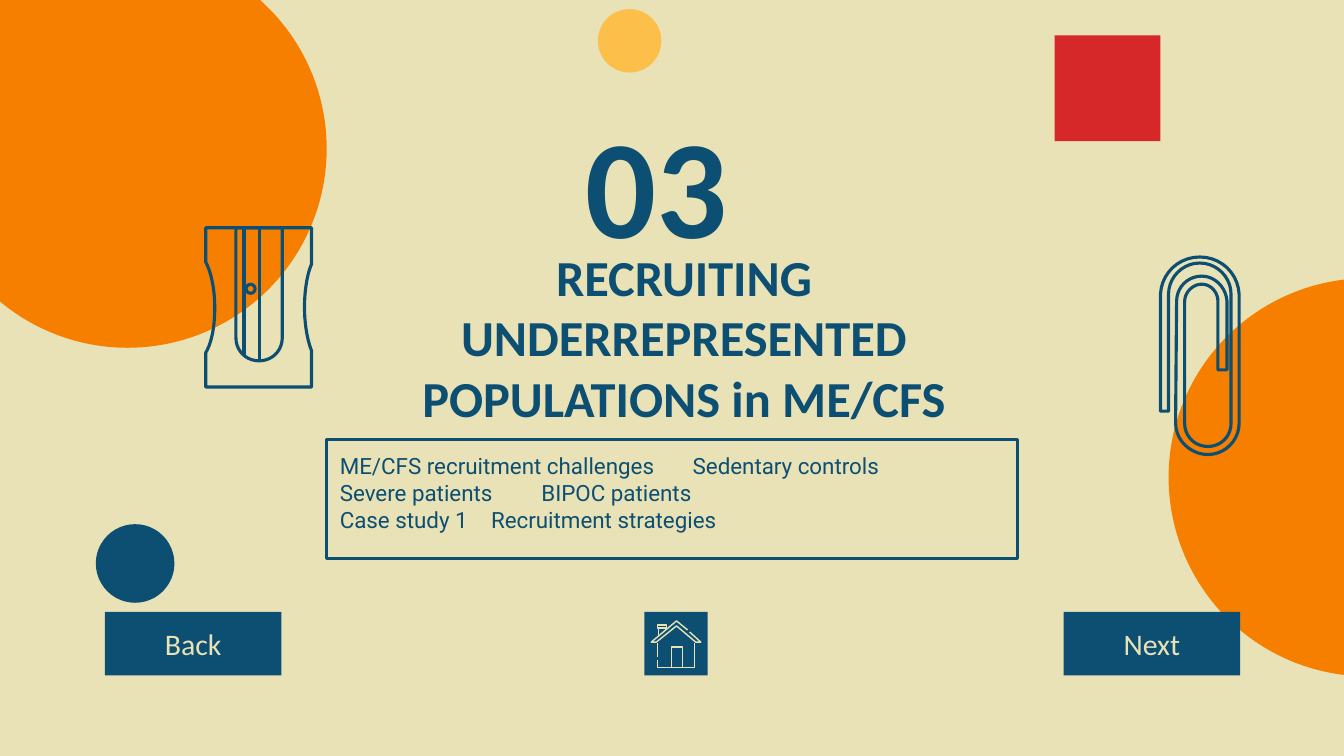
"""Build the section slide on recruiting underrepresented populations."""
from dataclasses import dataclass

from lxml.etree import SubElement
from pptx import Presentation
from pptx.dml.color import RGBColor
from pptx.enum.shapes import MSO_CONNECTOR, MSO_SHAPE
from pptx.enum.text import MSO_ANCHOR, MSO_AUTO_SIZE, PP_ALIGN
from pptx.oxml.ns import qn
from pptx.util import Inches, Pt

NAVY = RGBColor(0x0C, 0x4F, 0x72)
CREAM = RGBColor(0xEA, 0xE2, 0xB7)
ORANGE = RGBColor(0xF7, 0x7F, 0x00)
YELLOW = RGBColor(0xFC, 0xBF, 0x49)
RED = RGBColor(0xD6, 0x28, 0x28)
CURVE_STEPS = 10


@dataclass(frozen=True)
class Block:
    kind: MSO_SHAPE
    left: float
    top: float
    width: float
    height: float
    color: RGBColor
    label: str = ""


@dataclass(frozen=True)
class Outline:
    steps: tuple
    color: RGBColor = NAVY
    weight: float = 2.25
    closed: bool = True


BLOCKS = (
    Block(MSO_SHAPE.OVAL, -0.71, -0.5, 3.95, 3.95, ORANGE),
    Block(MSO_SHAPE.OVAL, 11.59, 2.76, 3.95, 3.95, ORANGE),
    Block(MSO_SHAPE.RECTANGLE, 10.46, 0.35, 1.05, 1.05, RED),
    Block(MSO_SHAPE.OVAL, 0.95, 5.2, 0.78, 0.78, NAVY),
    Block(MSO_SHAPE.OVAL, 5.93, 0.09, 0.63, 0.63, YELLOW),
    Block(MSO_SHAPE.RECTANGLE, 1.04, 6.07, 1.75, 0.63, NAVY, "Back"),
    Block(MSO_SHAPE.RECTANGLE, 6.39, 6.07, 0.63, 0.63, NAVY),
    Block(MSO_SHAPE.RECTANGLE, 10.55, 6.07, 1.75, 0.63, NAVY, "Next"),
)

SHARPENER = (
    Outline(((3.09, 2.62), (3.09, 2.26), (2.04, 2.26), (2.04, 2.6),
             (2.09, 2.69, 2.13, 2.86, 2.13, 3.05),
             (2.13, 3.24, 2.1, 3.4, 2.04, 3.5),
             (2.04, 3.84), (3.09, 3.84), (3.09, 3.48),
             (3.05, 3.38, 3.02, 3.22, 3.02, 3.05),
             (3.02, 2.87, 3.05, 2.71, 3.09, 2.62))),
    Outline(((2.34, 3.35), (2.34, 2.26), (2.8, 2.26), (2.8, 3.35),
             (2.8, 3.48, 2.7, 3.58, 2.57, 3.58),
             (2.44, 3.58, 2.34, 3.48, 2.34, 3.35))),
)
BLADE_EDGES = ((2.42, 3.53), (2.57, 3.58))

PAPERCLIP = Outline((
    (11.51, 2.92), (11.51, 4.08), (11.59, 4.08), (11.59, 2.92),
    (11.59, 2.75, 11.73, 2.61, 11.9, 2.61),
    (12.07, 2.61, 12.21, 2.75, 12.21, 2.92), (12.21, 4.2),
    (12.21, 4.33, 12.11, 4.43, 11.98, 4.43),
    (11.85, 4.43, 11.75, 4.33, 11.75, 4.2), (11.75, 2.99),
    (11.75, 2.9, 11.83, 2.82, 11.92, 2.82),
    (12.01, 2.82, 12.08, 2.9, 12.08, 2.99),
    (12.08, 3.67), (12.17, 3.67), (12.17, 2.99),
    (12.16, 2.85, 12.05, 2.74, 11.92, 2.74),
    (11.78, 2.74, 11.67, 2.85, 11.67, 2.99), (11.66, 4.2),
    (11.66, 4.37, 11.81, 4.51, 11.98, 4.51),
    (12.15, 4.51, 12.29, 4.37, 12.29, 4.2), (12.29, 2.92),
    (12.28, 2.71, 12.11, 2.55, 11.9, 2.55),
    (11.69, 2.55, 11.52, 2.71, 11.51, 2.92)))

HOUSE = tuple(Outline(steps, CREAM, 1, False) for steps in (
    ((6.84, 6.27), (6.95, 6.37), (6.9, 6.37), (6.71, 6.21), (6.51, 6.37),
     (6.46, 6.37), (6.71, 6.16), (6.82, 6.25)),
    ((6.52, 6.38), (6.52, 6.52)),
    ((6.52, 6.55), (6.52, 6.62), (6.89, 6.62), (6.89, 6.38)),
    ((6.66, 6.62), (6.66, 6.42), (6.77, 6.42), (6.77, 6.62)),
    ((6.52, 6.2), (6.61, 6.2), (6.61, 6.23), (6.52, 6.23), (6.52, 6.2)),
    ((6.53, 6.23), (6.53, 6.3)),
    ((6.6, 6.23), (6.6, 6.25)),
))

TOPICS = (
    "ME/CFS recruitment challenges\tSedentary controls",
    "Severe patients\tBIPOC patients",
    "Case study 1\tRecruitment strategies",
)


def place(sp, left: float, top: float, width: float, height: float) -> None:
    sp.left, sp.top = Inches(left), Inches(top)
    sp.width, sp.height = Inches(width), Inches(height)


def write(sp, *lines: str, size: float, font: str = "Calibri",
          color: RGBColor = NAVY, bold: bool = False,
          align: PP_ALIGN = PP_ALIGN.CENTER,
          anchor: MSO_ANCHOR = MSO_ANCHOR.MIDDLE) -> None:
    tf = sp.text_frame
    tf.word_wrap, tf.auto_size = True, MSO_AUTO_SIZE.NONE
    tf.vertical_anchor = anchor
    tf.margin_left = tf.margin_right = Inches(0.13)
    tf.margin_top = tf.margin_bottom = Inches(0.13)
    for i, line in enumerate(lines):
        p = tf.paragraphs[0] if i == 0 else tf.add_paragraph()
        p.alignment, p.space_before = align, Pt(0)
        r = p.add_run()
        r.text = line
        r.font.size, r.font.name, r.font.bold = Pt(size), font, bold
        r.font.color.rgb = color


def set_tab(sp, position: float) -> None:
    for p in sp.text_frame.paragraphs:
        tabs = SubElement(p._p.get_or_add_pPr(), qn("a:tabLst"))
        SubElement(tabs, qn("a:tab"), pos=str(Inches(position)), algn="l")


def draw_block(s, block: Block) -> None:
    sp = s.shapes.add_shape(block.kind, 0, 0, 0, 0)
    place(sp, block.left, block.top, block.width, block.height)
    sp.shadow.inherit = False
    sp.fill.solid()
    sp.fill.fore_color.rgb = block.color
    sp.line.fill.background()
    if block.label:
        write(sp, block.label, size=21.3, color=CREAM)


def flatten(steps: tuple) -> list[tuple[float, float]]:
    points = [steps[0]]
    for step in steps[1:]:
        if len(step) == 2:
            points.append(step)
            continue
        start, a, b, end = points[-1], step[:2], step[2:4], step[4:]
        for i in range(1, CURVE_STEPS + 1):
            t = i / CURVE_STEPS
            u = 1 - t
            points.append(tuple(
                u**3 * start[k] + 3 * u * u * t * a[k] + 3 * u * t * t * b[k] + t**3 * end[k]
                for k in (0, 1)))
    return points


def stroke(sp, color: RGBColor, weight: float) -> None:
    sp.fill.background()
    sp.shadow.inherit = False
    sp.line.color.rgb, sp.line.width = color, Pt(weight)


def draw_outline(s, outline: Outline) -> None:
    points = [(Inches(x), Inches(y)) for x, y in flatten(outline.steps)]
    builder = s.shapes.build_freeform(*points[0])
    builder.add_line_segments(points[1:], close=outline.closed)
    stroke(builder.convert_to_shape(), outline.color, outline.weight)


def draw_sharpener(s) -> None:
    for outline in SHARPENER:
        draw_outline(s, outline)
    for x, bottom in BLADE_EDGES:
        edge = s.shapes.add_connector(MSO_CONNECTOR.STRAIGHT, Inches(x), Inches(2.26),
                                      Inches(x), Inches(bottom))
        edge.line.color.rgb, edge.line.width = NAVY, Pt(2.25)
        SubElement(edge._element.spPr, qn("a:effectLst"))
    screw = s.shapes.add_shape(MSO_SHAPE.OVAL, 0, 0, 0, 0)
    place(screw, 2.44, 2.82, 0.09, 0.09)
    stroke(screw, NAVY, 2.25)


def main() -> None:
    prs = Presentation()
    prs.slide_width, prs.slide_height = Inches(13.33), Inches(7.5)
    s = prs.slides.add_slide(prs.slide_layouts[0])
    s.background.fill.solid()
    s.background.fill.fore_color.rgb = CREAM

    title, topics = s.placeholders
    place(title, 3.24, 2.79, 7.09, 1.1)
    write(title, "RECRUITING UNDERREPRESENTED POPULATIONS in ME/CFS", size=36, bold=True)
    place(topics, 3.24, 4.36, 6.85, 1.18)
    write(topics, *TOPICS, size=16, font="Roboto", align=PP_ALIGN.LEFT, anchor=MSO_ANCHOR.TOP)
    set_tab(topics, 4)
    topics.line.color.rgb, topics.line.width = NAVY, Pt(2.25)
    number = s.shapes.add_textbox(Inches(3.84), Inches(0.78), Inches(5.65), Inches(2.06))
    write(number, "03 ", size=100, bold=True)

    for block in BLOCKS:
        draw_block(s, block)
    draw_sharpener(s)
    for outline in (PAPERCLIP, *HOUSE):
        draw_outline(s, outline)
    prs.save("out.pptx")


if __name__ == "__main__":
    main()
